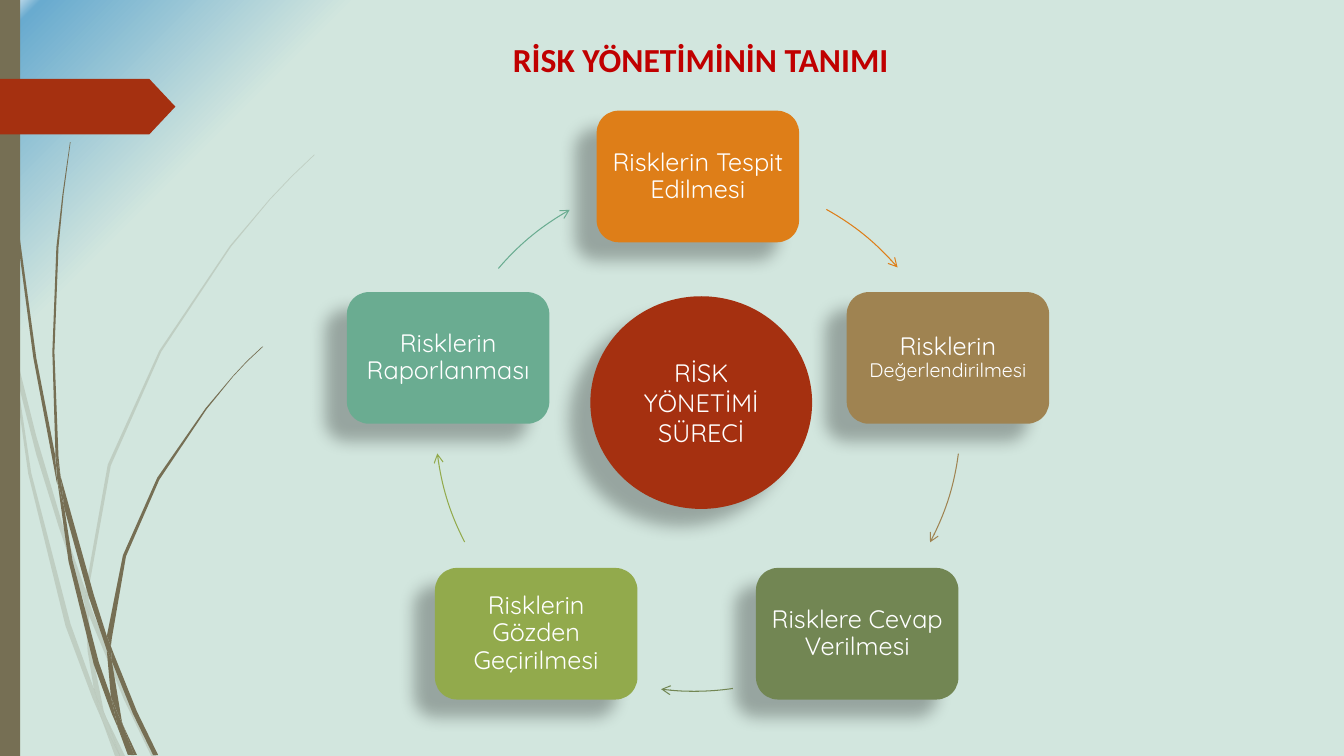
from dataclasses import dataclass

from lxml import etree
from pptx import Presentation
from pptx import util as u
from pptx.dml.color import RGBColor
from pptx.enum import shapes, text
from pptx.oxml import parse_xml
from pptx.oxml.ns import nsdecls, qn

Point = tuple[float, float]


@dataclass(frozen=True)
class Theme:
    mint: str = "D2E6DE"
    sky: str = "69ABCF"
    white: str = "FFFFFF"
    black: str = "000000"
    stem: str = "766F54"
    rust: str = "A53010"
    heading: str = "C00000"
    orange: str = "DE7E18"
    tan: str = "9F8351"
    forest: str = "728653"
    olive: str = "92AA4C"
    teal: str = "6AAC91"
    title_font: str = "Calibri"
    body_font: str = "Quicksand"
    title_size: float = 24
    body_size: float = 18
    small_size: float = 14


@dataclass(frozen=True)
class Stage:
    """A step of the cycle, with the arc that leads on to the next step."""
    runs: tuple[tuple[str, float], ...]
    color: str
    left: float
    top: float
    arc_center: Point
    arc_start: float
    arc_end: float


@dataclass(frozen=True)
class Wisp:
    """A clump of grass: the outlines of its blades and their opacity in percent."""
    blades: tuple[tuple[Point, ...], ...]
    alpha: int


T = Theme()
SLIDE_W, SLIDE_H = 960, 540
STAGE_W, STAGE_H = 144.6, 94
ARC_RADIUS = 187.9

STAGES = (
    Stage((("Risklerin Tespit Edilmesi", T.body_size),), T.orange,
          426.2, 79.1, (498.9, 313.8), 299.1, 319.2),
    Stage((("Risklerin ", T.body_size), ("Değerlendirilmesi", T.small_size)), T.tan,
          604.8, 208.7, (498.3, 299.5), 7.5, 27.9),
    Stage((("Risklere Cevap Verilmesi", T.body_size),), T.forest,
          540, 405.7, (496.1, 305.9), 81.6, 97.3),
    Stage((("Risklerin Gözden Geçirilmesi", T.body_size),), T.olive,
          310.7, 405.7, (498.9, 301), 152.7, 173),
    Stage((("Risklerin Raporlanması", T.body_size),), T.teal,
          247.8, 208.7, (498.9, 313.8), 220.5, 240.7),
)

PALE_WISP = Wisp((
    ((7.9, 252), (6.5, 231.8), (0, 203), (0, 215.3), (7.2, 247.7)),
    ((41.8, 375.8), (60.5, 431.3), (61.2, 421.9), (44.6, 374.4), (26, 311.9), (10.1, 248.4),
     (12.2, 270.7), (25.9, 324.6)),
    ((66.2, 437), (63.4, 429.1), (63.4, 439.2), (88.6, 499.7), (108, 540), (111.6, 540),
     (91.4, 498.2)),
    ((85.7, 540), (89.3, 540), (75.6, 511.9)),
    ((67, 491.8), (50.4, 445.7), (22.3, 337.7), (12.2, 270.7), (7.9, 252), (20.2, 338.4),
     (46.8, 447.1), (66.2, 499), (72.7, 514.1), (71.3, 509)),
    ((60.5, 431.3), (62.6, 465.1), (67, 491.8), (69.1, 498.2), (75.6, 511.9), (74.2, 508.3),
     (65.5, 465.1), (63.4, 439.2), (63.4, 437.8)),
    ((63.4, 420.5), (79.2, 332.6), (115.2, 251.3), (164.9, 176.4), (193, 142.6), (208.8, 126),
     (224.6, 110.9), (224.6, 110.2), (208.1, 126), (193, 141.8), (164.2, 175.7),
     (113.8, 250.6), (77, 331.9), (61.2, 420.5), (61.2, 421.9), (63.4, 429.1)),
    ((72.7, 514.1), (82.1, 540), (85.7, 540)),
    ((63.4, 437.8), (63.4, 439.2), (63.4, 429.1), (61.2, 421.9), (60.5, 431.3)),
    ((69.1, 498.2), (67, 491.8), (71.3, 509), (72.7, 514.1), (85.7, 540), (75.6, 511.9)),
), 20)

DARK_WISP = Wisp((
    ((5, 79.2), (12.2, 167.8), (23.8, 255.6), (40.3, 343.4), (41, 346.3), (39.6, 329),
     (39.6, 326.2), (25.9, 255.6), (13.7, 167), (5.8, 78.5), (3.6, 34.6), (2.9, 0), (2.2, 0),
     (2.9, 34.6)),
    ((63.4, 426.2), (76.3, 464.4), (76.3, 454.3), (67, 424.8), (43.2, 339.8), (46.1, 363.6)),
    ((81.4, 467.3), (79.2, 461.5), (79.9, 472.3), (95, 509.8), (109.4, 539.3),
     (113, 539.3), (97.9, 508.3)),
    ((95.8, 539.3), (97.9, 539.3), (87.8, 517.7)),
    ((79.2, 497.5), (70.6, 473), (51.8, 400.3), (46.1, 363.6), (41, 343.4), (49, 401),
     (67, 474.5), (79.9, 509.8), (84.2, 519.8), (83.5, 516.2)),
    ((43.2, 339.8), (41.8, 326.2), (38.9, 251.3), (41.8, 176.4), (45.4, 139), (50.4, 101.5),
     (50, 101.5), (44.6, 139), (40.3, 176.4), (37.4, 251.3), (39.6, 323.3)),
    ((41, 343.4), (46.1, 363.6), (43.2, 339.8), (39.6, 323.3), (39.6, 326.2)),
    ((79.9, 455.8), (90, 397.4), (113.8, 342.7), (147.6, 292.3), (166.3, 269.3),
     (176.4, 258.5), (187.9, 247.7), (187.2, 247.7), (176.4, 257.8), (166.3, 268.6),
     (146.9, 291.6), (112.3, 341.3), (87.8, 396.7), (76.3, 454.3), (79.2, 461.5)),
    ((84.2, 519.8), (91.4, 539.3), (94.3, 539.3)),
    ((76.3, 464.4), (79.2, 497.5), (83.5, 508.3), (87.8, 517.7), (87.1, 515.5),
     (79.9, 472.3), (78.5, 468.7)),
    ((76.3, 464.4), (78.5, 468.7), (79.9, 472.3), (79.2, 461.5), (76.3, 454.3)),
    ((83.5, 508.3), (79.2, 497.5), (83.5, 516.2), (84.2, 519.8), (93.6, 539.3),
     (95.8, 539.3), (87.8, 517.7)),
), 100)


def set_all(target: object, **values) -> None:
    for name, value in values.items():
        setattr(target, name, value)


def paint(sp, color: str) -> None:
    sp.fill.solid()
    sp.fill.fore_color.rgb = RGBColor.from_string(color)
    sp.line.fill.background()
    sp.shadow.inherit = False


def add_solid(slide, kind: shapes.MSO_SHAPE, color: str, *box: float):
    sp = slide.shapes.add_shape(kind, *map(u.Pt, box))
    paint(sp, color)
    return sp


def sub(parent, tag: str, **attrs):
    return etree.SubElement(parent, qn(tag), {k: str(v) for k, v in attrs.items()})


def cast_shadow(sp) -> None:
    shadow = sub(sp._element.spPr.find(qn("a:effectLst")), "a:outerShdw", blurRad=u.Pt(11.8),
                 dist=u.Pt(19.7), dir=141 * 60000, algn="ctr", rotWithShape=0)
    sub(sub(shadow, "a:srgbClr", val=T.black), "a:alpha", val=28000)


def write(sp, runs: tuple[tuple[str, float], ...], font: str, color: str, bold: bool = False,
          spacing: float = 1.0, left: float = 7.2, right: float = 7.2) -> None:
    tf = sp.text_frame
    set_all(tf, word_wrap=True, auto_size=text.MSO_AUTO_SIZE.NONE, margin_left=u.Pt(left),
            margin_right=u.Pt(right), vertical_anchor=text.MSO_ANCHOR.MIDDLE)
    p = tf.paragraphs[0]
    set_all(p, alignment=text.PP_ALIGN.CENTER, line_spacing=spacing)
    for words, size in runs:
        r = p.add_run()
        r.text = words
        set_all(r.font, name=font, size=u.Pt(size), bold=bold)
        r.font.color.rgb = RGBColor.from_string(color)


def add_background(slide) -> None:
    stops = "".join(f'<a:gs pos="{pos}000"><a:srgbClr val="{color}"/></a:gs>'
                    for pos, color in ((83, T.mint), (98, T.sky), (100, T.white)))
    slide._element.cSld.insert(0, parse_xml(
        f'<p:bg {nsdecls("p", "a")}><p:bgPr><a:gradFill rotWithShape="1">'
        f'<a:gsLst>{stops}</a:gsLst><a:path path="circle"><a:fillToRect l="100000" t="100000"/>'
        '</a:path></a:gradFill><a:effectLst/></p:bgPr></p:bg>'))


def add_wisp(slide, wisp: Wisp) -> None:
    for blade in wisp.blades:
        start, *rest = [(u.Pt(x), u.Pt(y)) for x, y in blade]
        builder = slide.shapes.build_freeform(*start)
        builder.add_line_segments(rest, close=True)
        sp = builder.convert_to_shape()
        paint(sp, T.stem)
        if wisp.alpha < 100:
            color = sp._element.spPr.find(f'{qn("a:solidFill")}/{qn("a:srgbClr")}')
            sub(color, "a:alpha", val=wisp.alpha * 1000)


def add_stage(slide, stage: Stage) -> None:
    sp = add_solid(slide, shapes.MSO_SHAPE.ROUNDED_RECTANGLE, stage.color,
                   stage.left, stage.top, STAGE_W, STAGE_H)
    cast_shadow(sp)
    write(sp, stage.runs, T.body_font, T.white, spacing=0.9, left=5, right=5)
    x, y = (v - ARC_RADIUS for v in stage.arc_center)
    arc = add_solid(slide, shapes.MSO_SHAPE.ARC, stage.color, x, y, 2 * ARC_RADIUS, 2 * ARC_RADIUS)
    for i, degrees in enumerate((stage.arc_start, stage.arc_end)):
        arc.adjustments[i] = degrees * 0.6
    arc.fill.background()
    arc.line.width = u.Pt(0.75)
    arc.line.color.rgb = RGBColor.from_string(stage.color)
    sub(arc.line._get_or_add_ln(), "a:tailEnd", type="arrow")


def main() -> None:
    prs = Presentation()
    set_all(prs, slide_width=u.Pt(SLIDE_W), slide_height=u.Pt(SLIDE_H))
    slide = prs.slides.add_slide(prs.slide_layouts[5])
    add_background(slide)
    for wisp in (PALE_WISP, DARK_WISP):
        add_wisp(slide, wisp)
    add_solid(slide, shapes.MSO_SHAPE.RECTANGLE, T.stem, 0, 0, 14.4, SLIDE_H)
    flag = add_solid(slide, shapes.MSO_SHAPE.PENTAGON, T.rust, 0, 56.3, 125.3, 39.8)
    flag.adjustments[0] = 0.47
    title = slide.shapes.title
    set_all(title, left=u.Pt(71.3), top=u.Pt(22.5), width=u.Pt(837.4), height=u.Pt(40))
    write(title, (("RİSK YÖNETİMİNİN TANIMI", T.title_size),), T.title_font, T.heading,
          bold=True, left=28.2)
    for stage in STAGES:
        add_stage(slide, stage)
    hub = add_solid(slide, shapes.MSO_SHAPE.OVAL, T.rust, 421.7, 211.6, 158.4, 151.9)
    cast_shadow(hub)
    write(hub, (("RİSK YÖNETİMİ SÜRECİ", T.body_size),), T.body_font, T.white)
    prs.save("out.pptx")


if __name__ == "__main__":
    main()
